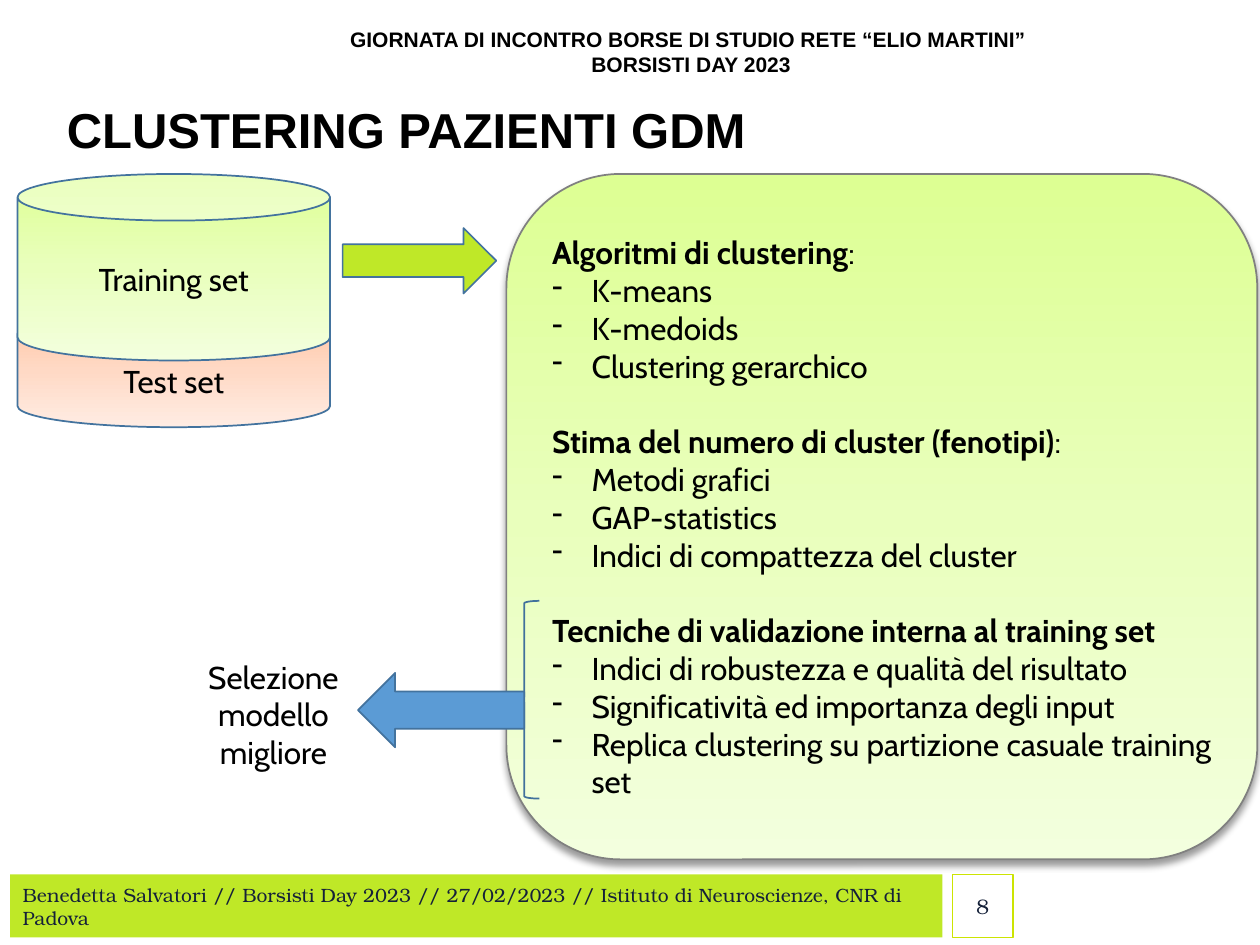
from copy import deepcopy

from lxml.etree import SubElement
from pptx import Presentation
from pptx.dml.color import RGBColor
from pptx.enum.shapes import MSO_SHAPE
from pptx.enum.text import MSO_ANCHOR, PP_ALIGN
from pptx.oxml.ns import qn
from pptx.util import Pt

BLACK = RGBColor(0x00, 0x00, 0x00)
NAVY = RGBColor(0x15, 0x21, 0x39)
WHITE = RGBColor(0xFF, 0xFF, 0xFF)
STEEL = RGBColor(0x43, 0x73, 0x9E)
BRACE_BLUE = RGBColor(0x41, 0x71, 0x9C)
BLUE = RGBColor(0x5B, 0x9B, 0xD5)
LIME = RGBColor(0xBF, 0xE8, 0x28)
FOOTER_LIME = RGBColor(0xB4, 0xE4, 0x02)
NUMBER_EDGE = RGBColor(0xCC, 0xE4, 0x02)
GREY = RGBColor(0x80, 0x80, 0x80)
GREENS = [RGBColor(0xDD, 0xFF, 0x93), RGBColor(0xE9, 0xFF, 0xBC), RGBColor(0xF3, 0xFF, 0xDE)]
PEACHES = [RGBColor(0xFF, 0xC4, 0xA0), RGBColor(0xFF, 0xD9, 0xC5), RGBColor(0xFF, 0xEC, 0xE3)]

# Content
EVENT = ["GIORNATA DI INCONTRO BORSE DI STUDIO RETE “ELIO MARTINI” ", "BORSISTI DAY 2023"]
TITLE = "CLUSTERING PAZIENTI GDM"
FOOTER = ("Benedetta Salvatori // Borsisti Day 2023 // 27/02/2023 // "
          "Istituto di Neuroscienze, CNR di Padova")
# Heading, what follows it in regular weight, items
METHODS = [
    ("Algoritmi di clustering", ": ",
     ["K-means", "K-medoids", "Clustering gerarchico"]),
    ("Stima del numero di cluster (fenotipi)", ":",
     ["Metodi grafici", "GAP-statistics", "Indici di compattezza del cluster"]),
    ("Tecniche di validazione interna al training set", "",
     ["Indici di robustezza e qualità del risultato",
      "Significatività ed importanza degli input",
      "Replica clustering su partizione casuale training set"]),
]

# Layout
LEFT, TOP = 10, 99.4
CAN_WIDTH = 178.6
FOOTER_TOP, FOOTER_HEIGHT = 499.7, 36
ITEM_INDENT = 22.5
SECTION_GAP = 21.6

presentation = Presentation()
presentation.slide_width, presentation.slide_height = Pt(720), Pt(540)
slide = presentation.slides.add_slide(presentation.slide_layouts[6])


def add_part(preset, box, fill=None, line=None, width=1):
    part = slide.shapes.add_shape(preset, *map(Pt, box))
    part.shadow.inherit = False
    if isinstance(fill, list):
        part.fill.gradient()
        part.fill.gradient_angle = 270
        first, last = part.fill.gradient_stops
        first.color.rgb, last.color.rgb = fill[0], fill[2]
        first.position, last.position = 0, 1
        start = part.element.spPr.find(".//" + qn("a:gs"))
        start.addnext(deepcopy(start))
        middle = part.fill.gradient_stops[1]
        middle.color.rgb, middle.position = fill[1], 0.5
    elif fill is not None:
        part.fill.solid()
        part.fill.fore_color.rgb = fill
    else:
        part.fill.background()
    if line is None:
        part.line.fill.background()
    else:
        part.line.color.rgb = line
        part.line.width = Pt(width)
    return part


def add_text_box(box):
    return slide.shapes.add_textbox(*map(Pt, box))


def write(part, text, size=18, font="Cabin", color=BLACK, bold=False,
          align=PP_ALIGN.CENTER, anchor=MSO_ANCHOR.MIDDLE, wrap=True, insets=None):
    """Text is a list of paragraphs: strings, or dicts with runs, bullet and before."""
    frame = part.text_frame
    frame.word_wrap = wrap
    frame.vertical_anchor = anchor
    if insets:
        frame.margin_left, frame.margin_top, frame.margin_right, frame.margin_bottom = map(Pt, insets)
    for index, entry in enumerate(text):
        if isinstance(entry, str):
            entry = {"runs": [(entry, bold)]}
        paragraph = frame.add_paragraph() if index else frame.paragraphs[0]
        paragraph.alignment = align
        if entry.get("before"):
            paragraph.space_before = Pt(entry["before"])
        if entry.get("bullet"):
            properties = paragraph._p.get_or_add_pPr()
            properties.set("marL", str(Pt(ITEM_INDENT)))
            properties.set("indent", str(Pt(-ITEM_INDENT)))
            SubElement(properties, qn("a:buChar")).set("char", entry["bullet"])
        for words, is_bold in entry["runs"]:
            run = paragraph.add_run()
            run.text = words
            run.font.name, run.font.size = font, Pt(size)
            run.font.bold, run.font.color.rgb = is_bold, color


# Event header and title
write(add_text_box((184.3, 11.5, 421.2, 36)), EVENT, size=12, font="Arial", bold=True,
      anchor=MSO_ANCHOR.TOP, wrap=False)
title = add_text_box((-1.4, 57.6, 720, 36))
write(title, [TITLE], size=28, font="Arial", bold=True, align=PP_ALIGN.LEFT,
      insets=(39.6, 2.9, 28.1, 2.9))
title.text_frame.paragraphs[0].line_spacing = 0.9

# Footer bar and slide number
footer = add_part(MSO_SHAPE.RECTANGLE, (5.8, FOOTER_TOP, 532.8, FOOTER_HEIGHT), FOOTER_LIME)
SubElement(footer.element.spPr.find(".//" + qn("a:srgbClr")), qn("a:alpha")).set("val", "85000")
write(footer, [FOOTER], size=11, font="TeX Gyre Bonum", color=NAVY, align=PP_ALIGN.LEFT)
number = add_part(MSO_SHAPE.RECTANGLE, (544.3, FOOTER_TOP, 34.6, FOOTER_HEIGHT),
                  WHITE, NUMBER_EDGE, 0.75)
write(number, ["8"], size=12, font="TeX Gyre Bonum", color=NAVY, align=PP_ALIGN.RIGHT,
      insets=(7.2, 3.6, 13.7, 3.6))

# Data set: the training part sits on the test part
test_set = add_part(MSO_SHAPE.CAN, (LEFT, 178.6, CAN_WIDTH, 65.5), PEACHES, STEEL)
test_set.adjustments[0] = 0.37
write(test_set, ["Test set"])
training_set = add_part(MSO_SHAPE.CAN, (LEFT, TOP, CAN_WIDTH, 106.6), GREENS, STEEL)
write(training_set, ["Training set"])

# Methods panel with a soft shadow below
panel = add_part(MSO_SHAPE.ROUNDED_RECTANGLE, (289.4, TOP, 429.1, 391.7), GREENS, GREY)
shadow = SubElement(panel.element.spPr.find(qn("a:effectLst")), qn("a:outerShdw"),
                    blurRad=str(Pt(4)), dist=str(Pt(3)), dir="5400000", rotWithShape="0")
shadow_color = SubElement(shadow, qn("a:srgbClr"), val="000000")
SubElement(shadow_color, qn("a:alpha"), val="40000")
lines = []
for heading, ending, items in METHODS:
    runs = [(heading, True)] + ([(ending, False)] if ending else [])
    lines.append({"runs": runs, "before": SECTION_GAP if lines else 0})
    lines += [{"runs": [(item, False)], "bullet": "-"} for item in items]
write(panel, lines, align=PP_ALIGN.JUSTIFY)

# Flow into the panel, and from the validation step to the chosen model
add_part(MSO_SHAPE.RIGHT_ARROW, (195.8, 130.3, 87.8, 37.4), LIME, STEEL)
add_part(MSO_SHAPE.LEFT_BRACE, (290.9, 343.4, 17.3, 113), line=BRACE_BLUE)
selection_arrow = add_part(MSO_SHAPE.RIGHT_ARROW, (204.5, 384.5, 95, 42.5), BLUE, STEEL)
selection_arrow.rotation = 180
write(add_text_box((108.7, 372.2, 95, 72.7)), ["Selezione modello migliore"],
      anchor=MSO_ANCHOR.TOP)

presentation.save("out.pptx")
